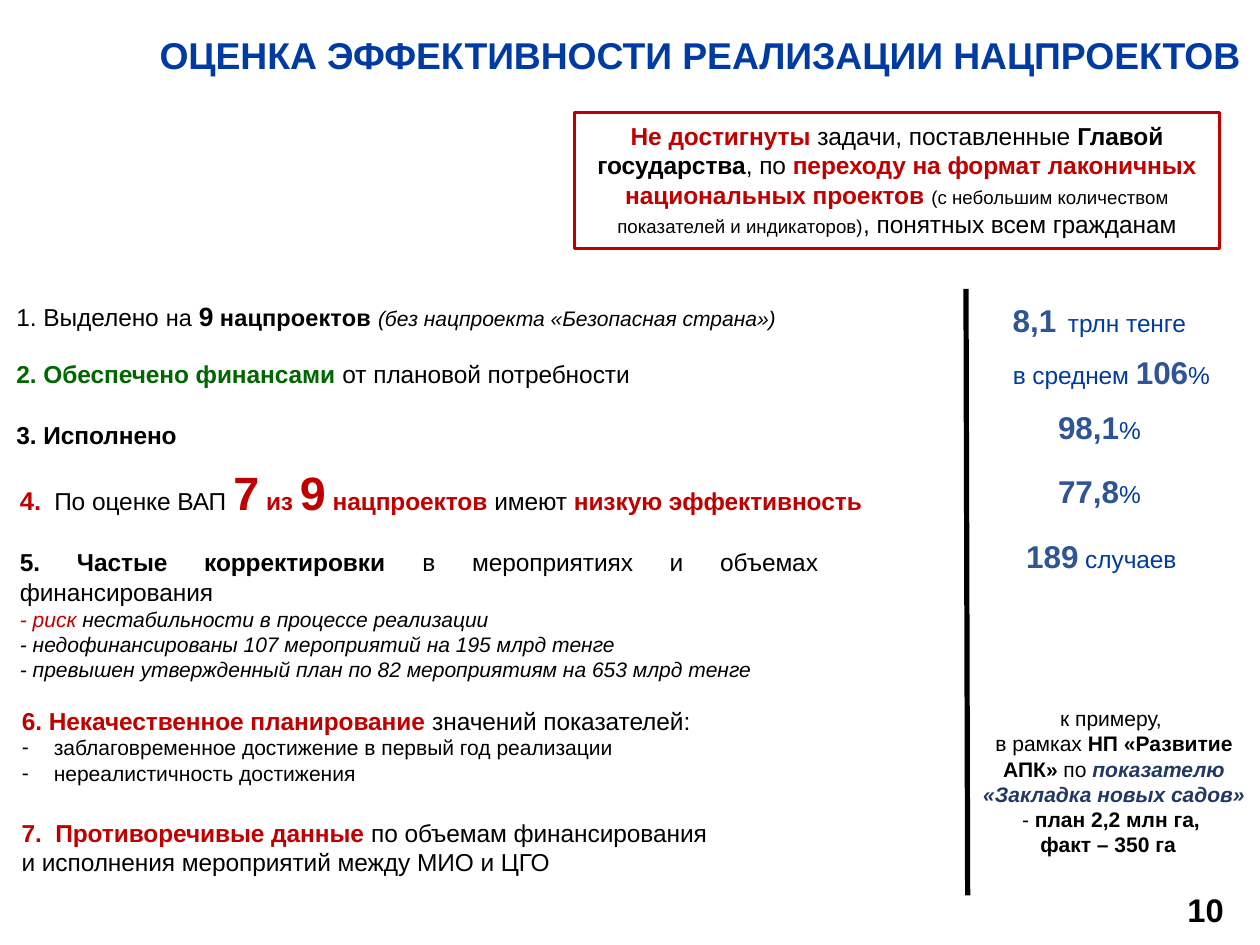
from lxml import etree
from pptx import Presentation
from pptx import util as u
from pptx.dml.color import RGBColor
from pptx.enum import shapes, text
from pptx.oxml.ns import qn

PAGE_WIDTH = 7.5
PAGE_HEIGHT = PAGE_WIDTH * 3 / 4
BLACK, RED, GREEN = "000000", "C00000", "006600"
BLUE, STEEL, NAVY = "003BA3", "2F5597", "203864"
ALIGN = text.PP_ALIGN

# A run is (text, size, colour, style); style holds "b" for bold, "i" for italic.
TITLE = [[("ОЦЕНКА ЭФФЕКТИВНОСТИ РЕАЛИЗАЦИИ НАЦПРОЕКТОВ", 16, BLUE, "b")]]

VERDICT = [[
    ("Не достигнуты ", 10.5, RED, "b"),
    ("задачи, поставленные ", 10.5, BLACK, ""),
    ("Главой государства", 10.5, BLACK, "b"),
    (", по ", 10.5, BLACK, ""),
    ("переходу на формат лаконичных национальных проектов ", 10.5, RED, "b"),
    ("(с небольшим количеством показателей и индикаторов)", 8, BLACK, ""),
    (", понятных всем гражданам", 10.5, BLACK, ""),
]]

# Each entry: (left, top, width, height), paragraphs
FINDINGS = [
    ((0, 1.74, 4.83, 0.29), [[
        ("1. Выделено ", 10.5, BLACK, ""),
        ("на ", 10.13, BLACK, ""),
        ("9", 11.25, BLACK, "b"),
        (" нацпроектов ", 10.13, BLACK, "b"),
        ("(без нацпроекта «Безопасная страна»)", 9, BLACK, "i"),
    ]]),
    ((0, 2.09, 4.36, 0.28), [[
        ("2. Обеспечено финансами ", 10.5, GREEN, "b"),
        ("от плановой потребности", 10.5, BLACK, ""),
    ]]),
    ((0, 2.45, 1.54, 0.28), [[("3. Исполнено", 10.5, BLACK, "b")]]),
    ((0.02, 2.71, 5.56, 0.44), [[
        ("4.", 11, RED, "b"),
        (" ", 20, RED, "b"),
        ("По оценке ВАП ", 10.5, BLACK, ""),
        ("7", 20, RED, "b"),
        (" из ", 10.5, RED, "b"),
        ("9", 20, RED, "b"),
        (" нацпроектов ", 10.5, RED, "b"),
        ("имеют ", 10.5, BLACK, ""),
        ("низкую эффективность ", 10.5, RED, "b"),
    ]]),
    ((0.02, 3.21, 4.95, 0.94), [
        [("5. Частые корректировки ", 10.5, BLACK, "b"),
         ("в мероприятиях и объемах финансирования ", 10.5, BLACK, "")],
        [("- риск", 9, RED, "i"),
         (" нестабильности в процессе реализации", 9, BLACK, "i")],
        [("- недофинансированы 107 мероприятий на 195 млрд тенге", 9, BLACK, "i")],
        [("- превышен утвержденный план по 82 мероприятиям на 653 млрд тенге",
          9, BLACK, "i")],
    ]),
    ((0.03, 4.82, 5.72, 0.45), [
        [("7.  Противоречивые данные ", 10.5, RED, "b"),
         ("по объемам финансирования ", 10.5, BLACK, "")],
        [("и исполнения мероприятий между МИО и ЦГО", 10.5, BLACK, "")],
    ]),
]

PLANNING = [
    [("6. Некачественное планирование ", 10.5, RED, "b"),
     ("значений показателей:", 10.5, BLACK, "")],
    [("заблаговременное достижение в первый год реализации ", 9, BLACK, "")],
    [("нереалистичность достижения", 9, BLACK, "")],
]

FIGURES = [
    ((5.93, 1.68, 1.33, 0.4), [[
        ("8,1", 13.5, STEEL, "b"), (" ", 18, BLUE, "b"), ("трлн тенге", 10.5, BLUE, "")]]),
    ((5.93, 2.05, 1.49, 0.33), [[
        ("в среднем ", 10.5, BLUE, ""), ("106", 13.5, STEEL, "b"), ("%", 10.5, BLUE, "")]]),
    ((6.2, 2.38, 0.76, 0.34), [[("98,1", 13.5, STEEL, "b"), ("%", 10.5, BLUE, "")]]),
    ((6.2, 2.76, 0.83, 0.33), [[("77,8", 13.5, STEEL, "b"), ("%", 10.5, BLUE, "")]]),
    ((6.01, 3.15, 1.25, 0.34), [[("189", 13.5, STEEL, "b"), (" случаев", 10.5, BLUE, "")]]),
    ((6.97, 5.25, 0.43, 0.34), [[("10", 14, BLACK, "b")]]),
]

EXAMPLE = [
    [("к примеру, ", 9, BLACK, "")],
    [("в рамках ", 9, BLACK, ""),
     ("НП «Развитие АПК»", 9, BLACK, "b"),
     (" по ", 9, BLACK, ""),
     ("показателю «Закладка новых садов» ", 9, NAVY, "bi"),
     ("- ", 9, BLACK, ""),
     ("план 2,2 млн га, ", 9, BLACK, "b")],
    [("факт – 350 га  ", 9, BLACK, "b")],
]


def color(value):
    return RGBColor.from_string(value)


def place(shape, area):
    shape.left, shape.top, shape.width, shape.height = map(u.Inches, area)


def write(shape, paragraphs, align, anchor=text.MSO_ANCHOR.TOP):
    frame = shape.text_frame
    frame.word_wrap = True
    frame.auto_size = text.MSO_AUTO_SIZE.NONE
    frame.vertical_anchor = anchor
    for index, runs in enumerate(paragraphs):
        para = frame.add_paragraph() if index else frame.paragraphs[0]
        para.alignment = align
        para.space_before = u.Pt(0)
        for words, size, tint, style in runs:
            span = para.add_run()
            span.text = words
            span.font.name = "Arial"
            span.font.size = u.Pt(size)
            span.font.color.rgb = color(tint)
            span.font.bold = "b" in style
            span.font.italic = "i" in style


def set_bullet(para, mark=None):
    """Give the paragraph a hanging mark, or none."""
    indent = u.Inches(0.19 if mark else 0)
    props = para._p.get_or_add_pPr()
    props.set("marL", str(indent))
    props.set("indent", str(-indent))
    if mark:
        etree.SubElement(props, qn("a:buFont")).set("typeface", "Arial")
        etree.SubElement(props, qn("a:buChar")).set("char", mark)
    else:
        etree.SubElement(props, qn("a:buNone"))


def add_text(page, area, paragraphs, align):
    box = page.shapes.add_textbox(*map(u.Inches, area))
    write(box, paragraphs, align)


def main():
    deck = Presentation()
    deck.slide_width, deck.slide_height = u.Inches(PAGE_WIDTH), u.Inches(PAGE_HEIGHT)
    page = deck.slides.add_slide(deck.slide_layouts[1])

    title, planning = page.placeholders
    place(title, (0.84, 0.12, 6.66, 0.46))
    frame = title.text_frame
    frame.margin_left = frame.margin_right = u.Inches(0.07)
    frame.margin_top = frame.margin_bottom = u.Inches(0.07)
    write(title, TITLE, ALIGN.CENTER)

    place(planning, (0.03, 4.15, 5.26, 0.58))
    write(planning, PLANNING, ALIGN.JUSTIFY)
    for index, para in enumerate(planning.text_frame.paragraphs):
        set_bullet(para, "-" if index else None)

    verdict = page.shapes.add_shape(
        shapes.MSO_SHAPE.RECTANGLE, *map(u.Inches, (3.42, 0.67, 3.84, 0.81)))
    verdict.shadow.inherit = False
    verdict.fill.background()
    verdict.line.color.rgb = color(RED)
    verdict.line.width = u.Pt(1.5)
    write(verdict, VERDICT, ALIGN.CENTER)

    for area, paragraphs in FINDINGS:
        add_text(page, area, paragraphs, ALIGN.JUSTIFY)
    for area, paragraphs in FIGURES:
        add_text(page, area, paragraphs, ALIGN.LEFT)
    add_text(page, (5.72, 4.15, 1.82, 1.01), EXAMPLE, ALIGN.CENTER)

    divider = page.shapes.add_connector(
        shapes.MSO_CONNECTOR.STRAIGHT, *map(u.Inches, (5.75, 1.72, 5.76, 5.33)))
    divider.line.color.rgb = color(BLACK)
    divider.line.width = u.Pt(2.25)
    etree.SubElement(divider._element.spPr, qn("a:effectLst"))

    deck.save("out.pptx")


if __name__ == "__main__":
    main()
